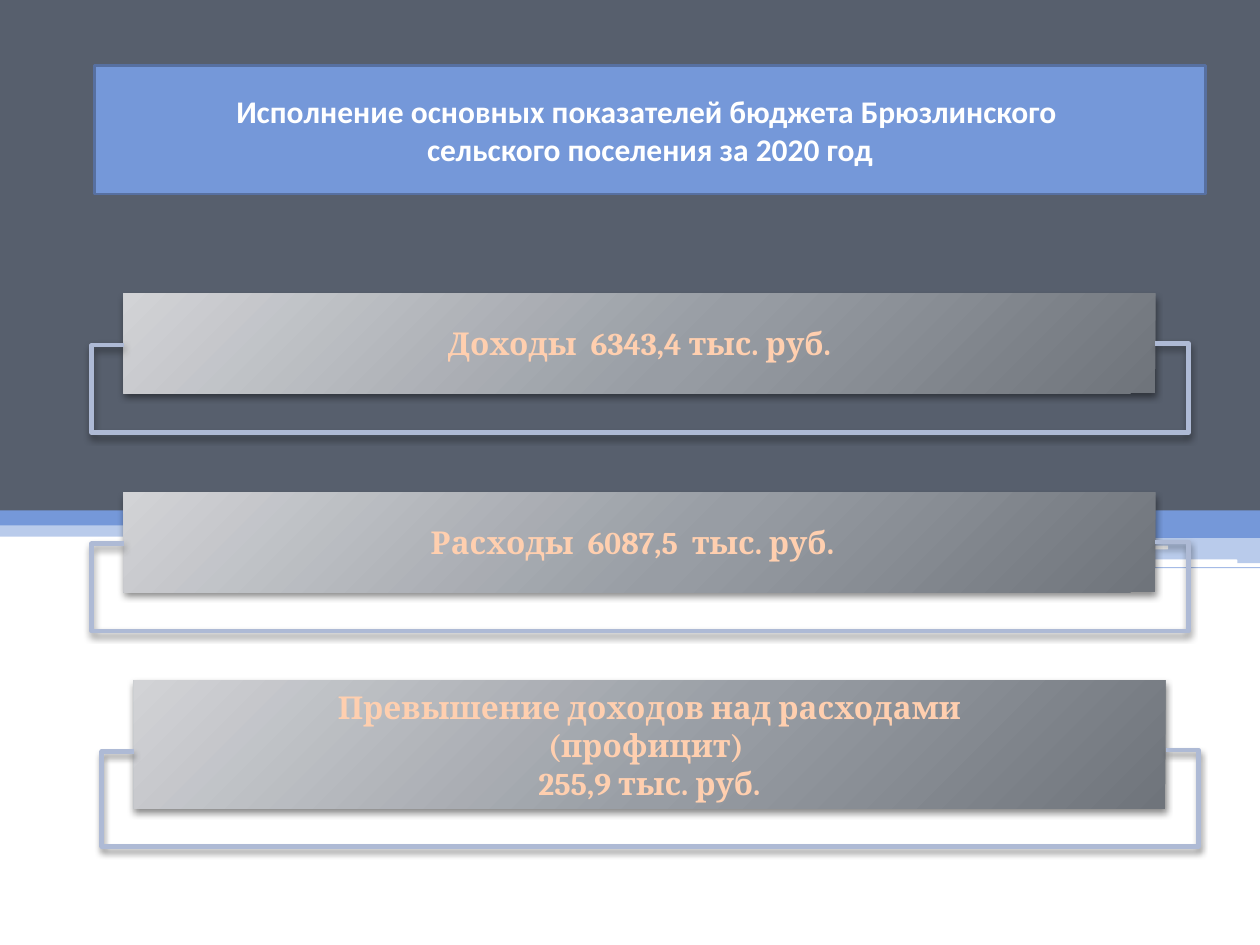
import pptx
import pptx.util
import pptx.dml.color
import pptx.enum.shapes
import pptx.enum.text
import pptx.oxml
import pptx.oxml.ns

SHAPE = pptx.enum.shapes.MSO_SHAPE
NS = pptx.oxml.ns.nsdecls("a")
SHADOW = (f'<a:effectLst {NS}><a:outerShdw blurRad="50800" dist="25400" dir="5400000">'
          '<a:srgbClr val="000000"><a:alpha val="45000"/></a:srgbClr></a:outerShdw></a:effectLst>')
BAR_FILL = (f'<a:gradFill {NS} rotWithShape="1"><a:gsLst>'
            '<a:gs pos="0"><a:srgbClr val="D2D3D6"/></a:gs>'
            '<a:gs pos="55000"><a:srgbClr val="989DA4"/></a:gs>'
            '<a:gs pos="100000"><a:srgbClr val="6F747B"/></a:gs></a:gsLst><a:path path="circle">'
            '<a:fillToRect l="-40000" t="-90000" r="140000" b="190000"/></a:path></a:gradFill>')

deck = pptx.Presentation()
deck.slide_width = pptx.util.Inches(10)
deck.slide_height = pptx.util.Inches(7.5)
slide = deck.slides.add_slide(deck.slide_layouts[5])


def share(*percents):
    """Turn alternating x, y percentages of the slide into lengths."""
    sides = (deck.slide_width, deck.slide_height)
    return [round(sides[i % 2] * p / 100) for i, p in enumerate(percents)]


def write(shape, lines, font_name, color):
    frame = shape.text_frame
    frame.word_wrap = True
    frame.auto_size = pptx.enum.text.MSO_AUTO_SIZE.NONE
    frame.vertical_anchor = pptx.enum.text.MSO_ANCHOR.MIDDLE
    frame.text = "\n".join(lines)
    for paragraph in frame.paragraphs:
        paragraph.alignment = pptx.enum.text.PP_ALIGN.CENTER
        paragraph.font.name = font_name
        paragraph.font.size = pptx.util.Pt(18)
        paragraph.font.bold = True
        paragraph.font.color.rgb = pptx.dml.color.RGBColor.from_string(color)


# Background bands: preset, left, top, width, height (% of slide), colour, opacity
bands = [
    (SHAPE.RECTANGLE, 59.2, 55.6, 40.8, 1.33, "7598D9", 100),
    (SHAPE.RECTANGLE, 59.2, 56.8, 40.8, 2.8, "7598D9", 50),
    (SHAPE.RECTANGLE, 59.2, 60, 40.8, 0.13, "7598D9", 65),
    (SHAPE.RECTANGLE, 59.2, 60.67, 21.5, 0.27, "7598D9", 60),
    (SHAPE.RECTANGLE, 59.2, 61.2, 21.5, 0.13, "7598D9", 65),
    (SHAPE.ROUNDED_RECTANGLE, 59.2, 57.73, 33.5, 0.4, "FFFFFF", 100),
    (SHAPE.ROUNDED_RECTANGLE, 80.7, 59.2, 17.5, 0.53, "FFFFFF", 100),
    (SHAPE.RECTANGLE, 0, 53.2, 100, 3.6, "7598D9", 50),
    (SHAPE.RECTANGLE, 0, 53.6, 100, 2, "7598D9", 100),
    (SHAPE.RECTANGLE, 70.1, 53.07, 29.9, 3.6, "7598D9", 100),
    (SHAPE.RECTANGLE, 0, 0, 100, 54, "575F6D", 100),
]
for preset, left, top, width, height, color, opacity in bands:
    band = slide.shapes.add_shape(preset, *share(left, top, width, height))
    band.shadow.inherit = False
    band.line.fill.background()
    band.fill.solid()
    band.fill.fore_color.rgb = pptx.dml.color.RGBColor.from_string(color)
    if opacity < 100:
        tint = band.fill._xPr.find(".//" + pptx.oxml.ns.qn("a:srgbClr"))
        tint.append(pptx.oxml.parse_xml(f'<a:alpha {NS} val="{opacity * 1000}"/>'))

# Heading, brought in front of the bands
heading = slide.shapes.title
heading.left, heading.top, heading.width, heading.height = share(7.5, 6.93, 88.2, 13.6)
heading.fill.solid()
heading.fill.fore_color.rgb = pptx.dml.color.RGBColor.from_string("7598D9")
heading.line.color.rgb = pptx.dml.color.RGBColor.from_string("5770A1")
heading.line.width = pptx.util.Pt(1.5)
write(heading, ["Исполнение основных показателей бюджета Брюзлинского ",
                "сельского поселения за 2020 год"], "Calibri", "FFFFFF")
slide.shapes._spTree.append(heading._element)

# Budget figures: left, top, height, bracket start, bracket drop (% of slide), lines
BAR_WIDTH, BRACKET_RISE = 81.9, 0.18
figures = [
    (9.8, 31.07, 10.53, 36.53, 9.33, ["Доходы  6343,4 тыс. руб."]),
    (9.8, 52.13, 10.53, 57.53, 9.33, ["Расходы  6087,5  тыс. руб.  "]),
    (10.6, 72, 13.6, 79.53, 10.13,
     ["Превышение доходов над расходами", "(профицит) ", "255,9 тыс. руб."]),
]
for left, top, height, start, drop, lines in figures:
    bar = slide.shapes.add_shape(SHAPE.RECTANGLE, *share(left, top, BAR_WIDTH, height))
    bar.line.fill.background()
    properties = bar._element.spPr
    properties.insert(2, pptx.oxml.parse_xml(BAR_FILL))
    properties.append(pptx.oxml.parse_xml(SHADOW))
    write(bar, lines, "Cambria", "FFCFAF")

# Brackets running from the left end of each bar, below it, to the right end
for left, top, height, start, drop, lines in figures:
    bracket = slide.shapes.add_connector(
        pptx.enum.shapes.MSO_CONNECTOR.ELBOW,
        *share(left + BAR_WIDTH, start - BRACKET_RISE, left, start))
    bracket.line.color.rgb = pptx.dml.color.RGBColor.from_string("AEBAD5")
    bracket.line.width = pptx.util.Pt(2.5)
    properties = bracket._element.spPr
    properties.xfrm.set("rot", "10800000")
    bends = (-3100, round(-drop / BRACKET_RISE * 100000), 103200)
    guides = "".join(f'<a:gd name="adj{i}" fmla="val {bend}"/>'
                     for i, bend in enumerate(bends, 1))
    properties.replace(properties.prstGeom, pptx.oxml.parse_xml(
        f'<a:prstGeom {NS} prst="bentConnector5"><a:avLst>{guides}</a:avLst></a:prstGeom>'))
    properties.append(pptx.oxml.parse_xml(SHADOW))

deck.save("out.pptx")
